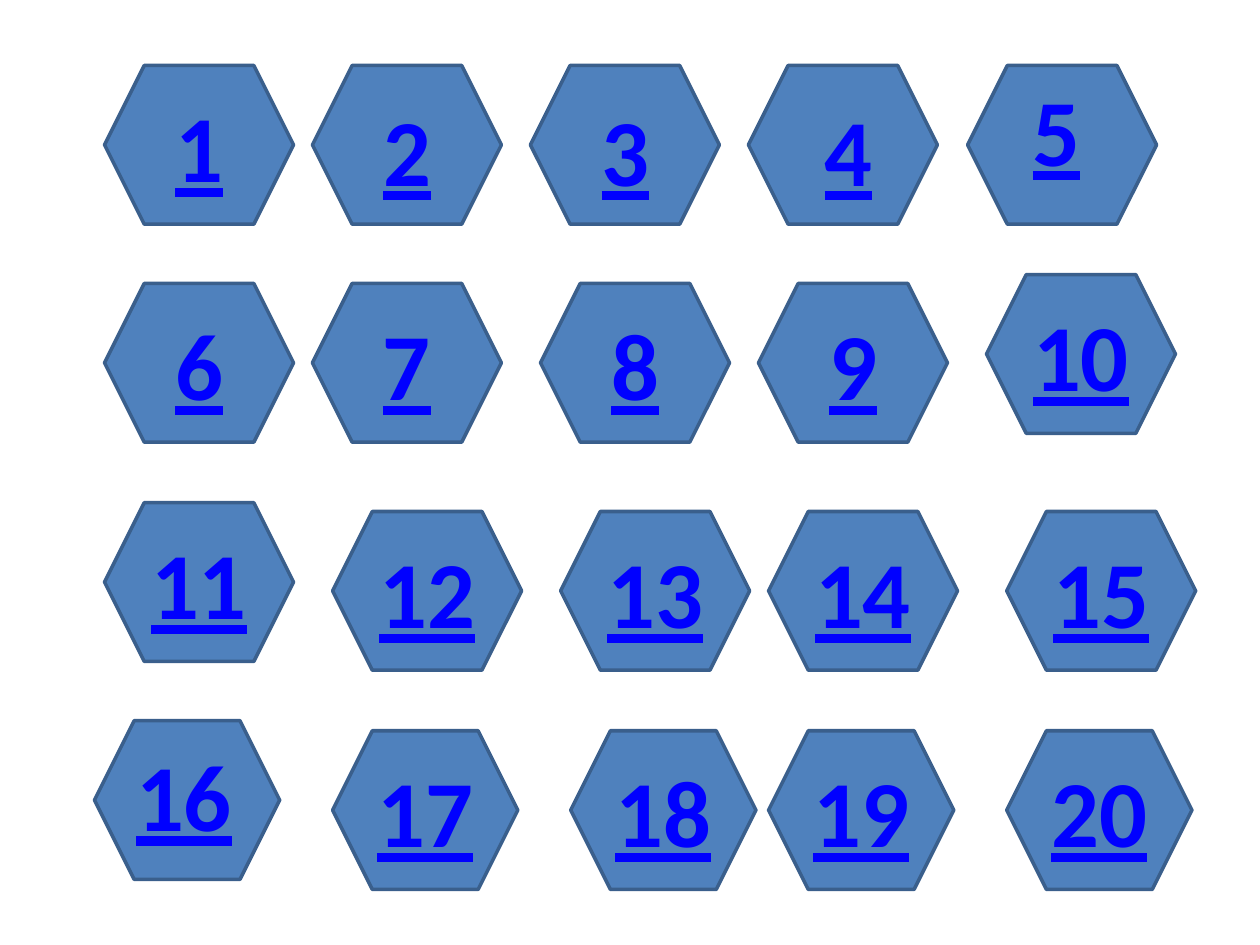
from pptx import Presentation
from pptx.dml.color import RGBColor
from pptx.enum import shapes, text
from pptx.util import Inches, Pt

# Rows of hexagons: first number, hexagon width, (left, top) of each
HEXAGON_HEIGHT = 1.26
ROWS = [
    (1, 1.5, [(0.83, 0.52), (2.48, 0.52), (4.21, 0.52), (5.94, 0.52), (7.68, 0.52)]),
    (6, 1.5, [(0.83, 2.25), (2.48, 2.25), (4.29, 2.25), (6.02, 2.25), (7.83, 2.18)]),
    (11, 1.5, [(0.83, 3.99), (2.64, 4.06), (4.45, 4.06), (6.1, 4.06), (7.99, 4.06)]),
    (16, 1.47, [(0.75, 5.72), (2.64, 5.8), (4.53, 5.8), (6.1, 5.8), (7.99, 5.8)]),
]

# Numbers that sit in their own text box: left, top, width
LABEL_HEIGHT = 1.01
LABELS = {
    2: (2.72, 0.68, 1.02),
    3: (4.61, 0.68, 0.71),
    4: (6.34, 0.68, 0.79),
    5: (7.99, 0.52, 0.79),
    16: (0.91, 5.8, 1.1),
}


def color(value):
    return RGBColor.from_string(value)


def write_number(shape, number):
    paragraph = shape.text_frame.paragraphs[0]
    paragraph.text = str(number)
    paragraph.alignment = text.PP_ALIGN.CENTER
    font = paragraph.font
    font.name, font.size = "Calibri", Pt(54)
    font.bold = font.underline = True
    font.color.rgb = color("0000FF")


def add_hexagon(slide, left, top, width):
    shape = slide.shapes.add_shape(
        shapes.MSO_SHAPE.HEXAGON,
        Inches(left), Inches(top), Inches(width), Inches(HEXAGON_HEIGHT))
    shape.shadow.inherit = False
    shape.fill.solid()
    shape.fill.fore_color.rgb = color("4F81BD")
    shape.line.color.rgb = color("3A5F8C")
    shape.line.width = Pt(2)
    shape.text_frame.vertical_anchor = text.MSO_ANCHOR.MIDDLE
    return shape


def add_label(slide, left, top, width):
    box = slide.shapes.add_textbox(
        Inches(left), Inches(top), Inches(width), Inches(LABEL_HEIGHT))
    box.text_frame.word_wrap = True
    box.text_frame.auto_size = text.MSO_AUTO_SIZE.SHAPE_TO_FIT_TEXT
    return box


def main():
    presentation = Presentation()
    presentation.slide_width, presentation.slide_height = Inches(10), Inches(7.5)
    slide = presentation.slides.add_slide(presentation.slide_layouts[6])

    # Hexagons, numbered unless a label carries the number
    for first, width, places in ROWS:
        for number, (left, top) in enumerate(places, first):
            hexagon = add_hexagon(slide, left, top, width)
            if number not in LABELS:
                write_number(hexagon, number)

    # Labels on top
    for number, place in LABELS.items():
        write_number(add_label(slide, *place), number)

    presentation.save("out.pptx")


if __name__ == "__main__":
    main()
